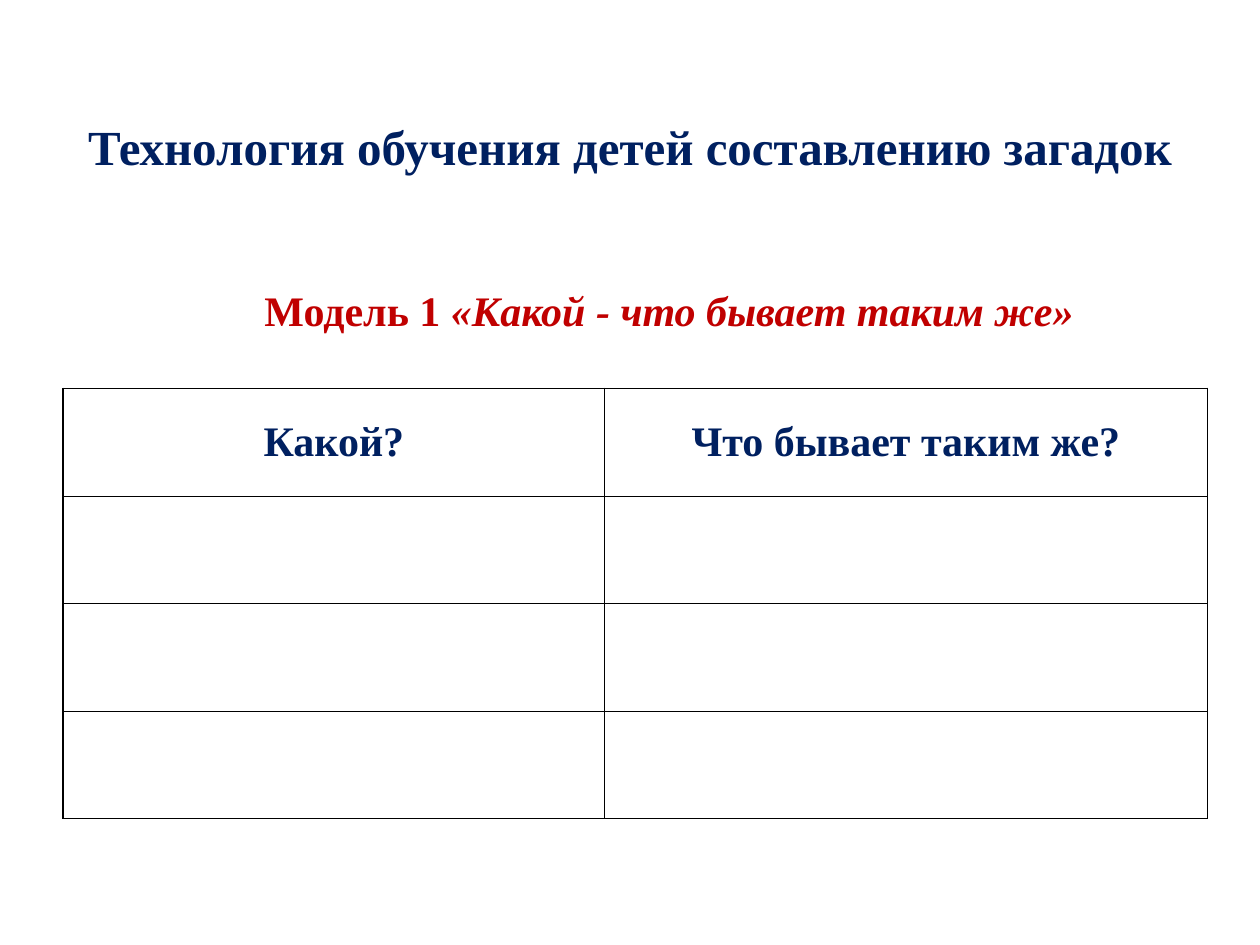
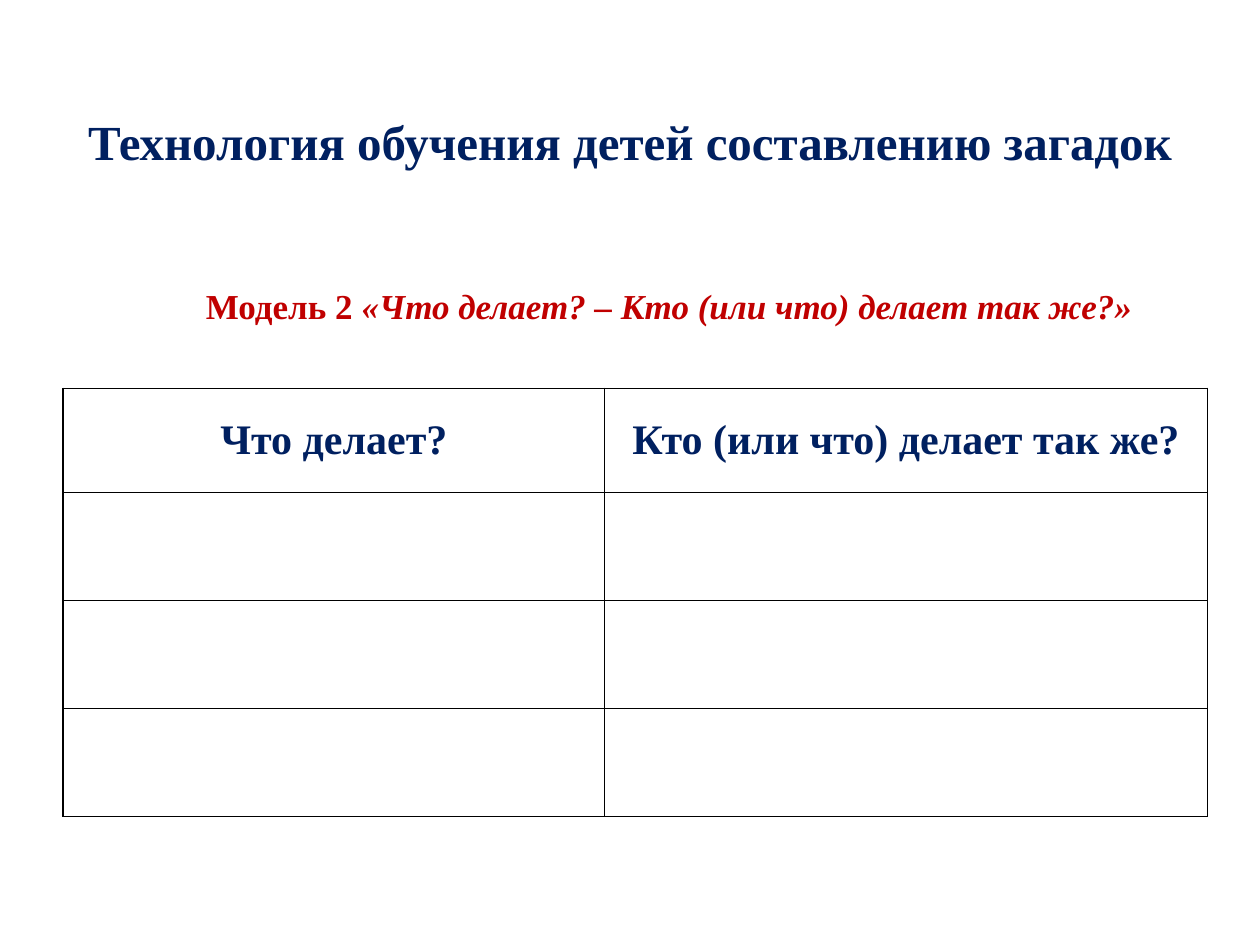
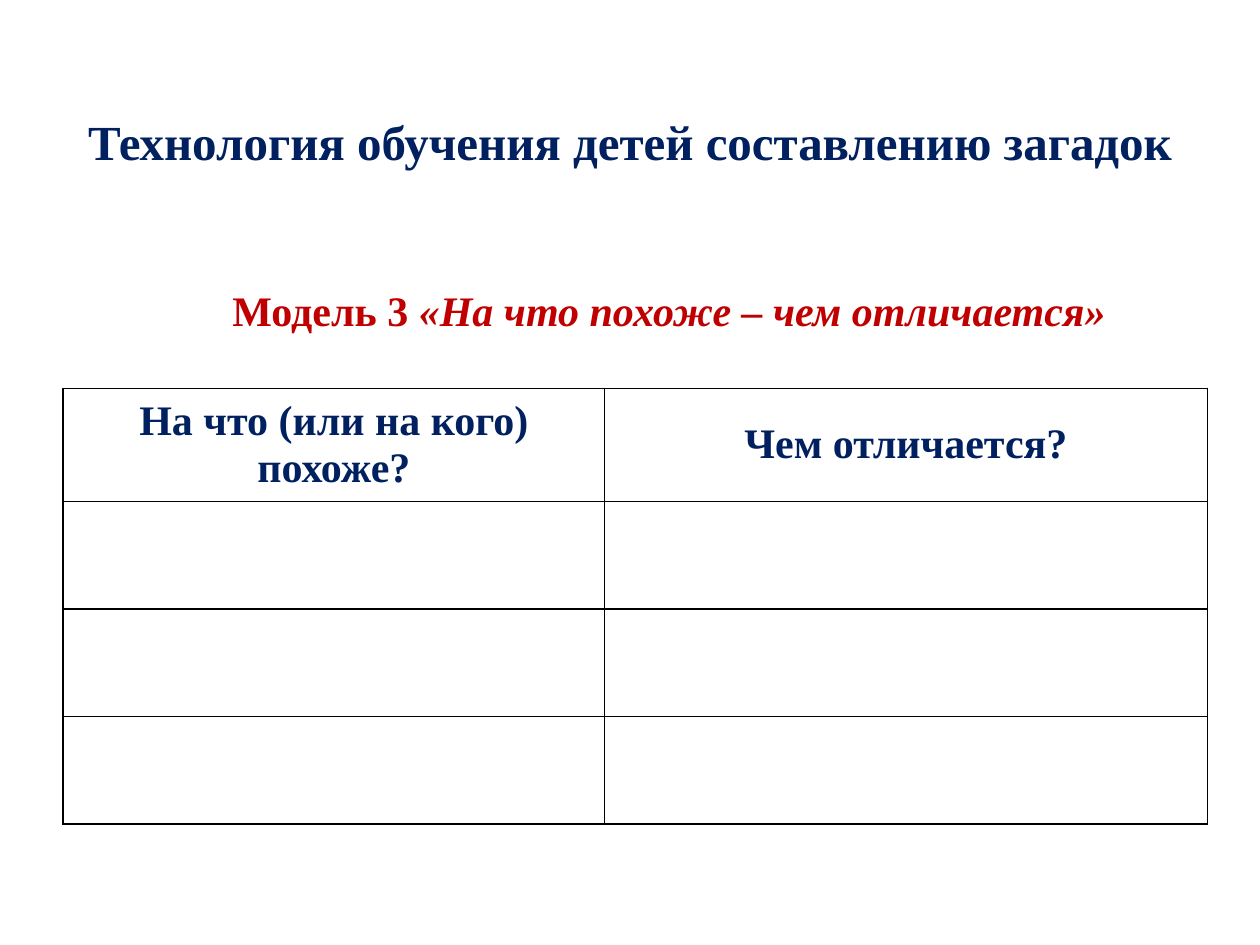
from lxml import etree
from pptx import Presentation
from pptx.dml.color import RGBColor
from pptx.enum.text import MSO_ANCHOR, MSO_AUTO_SIZE, PP_ALIGN
from pptx.oxml.ns import qn
from pptx.util import Inches, Pt

CENTER = PP_ALIGN.CENTER
MIDDLE = MSO_ANCHOR.MIDDLE
TOP = MSO_ANCHOR.TOP
NO_AUTOFIT = MSO_AUTO_SIZE.NONE

FONT = "Times New Roman"
NAVY, RED, BLACK, WHITE = "002060", "C00000", "000000", "FFFFFF"
TITLE_CONTENT_LAYOUT = 1

TITLE = "Технология обучения детей составлению загадок"
COLUMN_WIDTHS = (4.3, 4.78)
BLANK_ROWS = 3

MODELS = [
    {"label": "Модель 1 ", "name": "«Какой - что бывает таким же»", "size": 24,
     "headers": ("Какой?", "Что бывает таким же?"),
     "title_height": 1.72, "table_height": 3.42, "header_height": 0.86},
    {"label": "Модель 2 ", "name": "«Что делает? – Кто (или что) делает так же?»", "size": 20,
     "headers": ("Что делает?", "Кто (или что) делает так же?"),
     "title_height": 1.64, "table_height": 3.4, "header_height": 0.83},
    {"label": "Модель 3 ", "name": "«На что похоже – чем отличается»", "size": 24,
     "headers": ("На что (или на кого) похоже?", "Чем отличается?"),
     "title_height": 1.64, "table_height": 3.46, "header_height": 0.9},
]


def color(hex_string):
    return RGBColor.from_string(hex_string)


def add_text(para, text, size=24, fill=NAVY, bold=True, italic=False):
    """Add a formatted span to a centred paragraph."""
    para.alignment = CENTER
    span = para.add_run()
    span.text = text
    font = span.font
    font.name, font.size = FONT, Pt(size)
    font.bold, font.italic = bold, italic
    font.color.rgb = color(fill)


def add_borders(cell, width=0.75, fill=BLACK):
    properties = cell._tc.get_or_add_tcPr()
    for side in ("a:lnL", "a:lnR", "a:lnT", "a:lnB"):
        line = etree.SubElement(properties, qn(side), w=str(Pt(width)))
        solid = etree.SubElement(line, qn("a:solidFill"))
        etree.SubElement(solid, qn("a:srgbClr"), val=fill)


class ModelDeck:
    def __init__(self):
        self.deck = Presentation()
        self.deck.slide_width, self.deck.slide_height = Inches(10), Inches(7.5)
        self.page = None

    def add_page(self):
        layout = self.deck.slide_layouts[TITLE_CONTENT_LAYOUT]
        self.page = self.deck.slides.add_slide(layout)

    def place(self, box, left, top, width, height, anchor):
        """Move a placeholder and return its first paragraph."""
        box.left, box.top = Inches(left), Inches(top)
        box.width, box.height = Inches(width), Inches(height)
        frame = box.text_frame
        frame.word_wrap = True
        frame.auto_size = NO_AUTOFIT
        frame.vertical_anchor = anchor
        return frame.paragraphs[0]

    def title(self, text, height):
        para = self.place(self.page.shapes.title, 0.5, 0.3, 9, height, MIDDLE)
        add_text(para, text, size=28)

    def model_name(self, label, name, size):
        para = self.place(self.page.placeholders[1], 0.83, 2.21, 8.96, 4.88, TOP)
        etree.SubElement(para._p.get_or_add_pPr(), qn("a:buNone"))
        para.space_before = Pt(0)
        add_text(para, label, size=size, fill=RED)
        add_text(para, name, size=size, fill=RED, italic=True)

    def table(self, headers, height, header_height):
        frame = self.page.shapes.add_table(
            1 + BLANK_ROWS, len(headers), Inches(0.5), Inches(3.08),
            Inches(sum(COLUMN_WIDTHS)), Inches(height))
        table = frame.table
        table.first_row = table.horz_banding = False
        for column, width in zip(table.columns, COLUMN_WIDTHS):
            column.width = Inches(width)
        blank_height = (height - header_height) / BLANK_ROWS
        for index, row in enumerate(table.rows):
            row.height = Inches(blank_height if index else header_height)
        for cell in table.iter_cells():
            add_borders(cell)
            cell.fill.solid()
            cell.fill.fore_color.rgb = color(WHITE)
        for cell, header in zip(table.rows[0].cells, headers):
            cell.vertical_anchor = MIDDLE
            add_text(cell.text_frame.paragraphs[0], header)


def main():
    models = ModelDeck()
    for model in MODELS:
        models.add_page()
        models.title(TITLE, model["title_height"])
        models.model_name(model["label"], model["name"], model["size"])
        models.table(model["headers"], model["table_height"], model["header_height"])
    models.deck.save("out.pptx")


if __name__ == "__main__":
    main()
